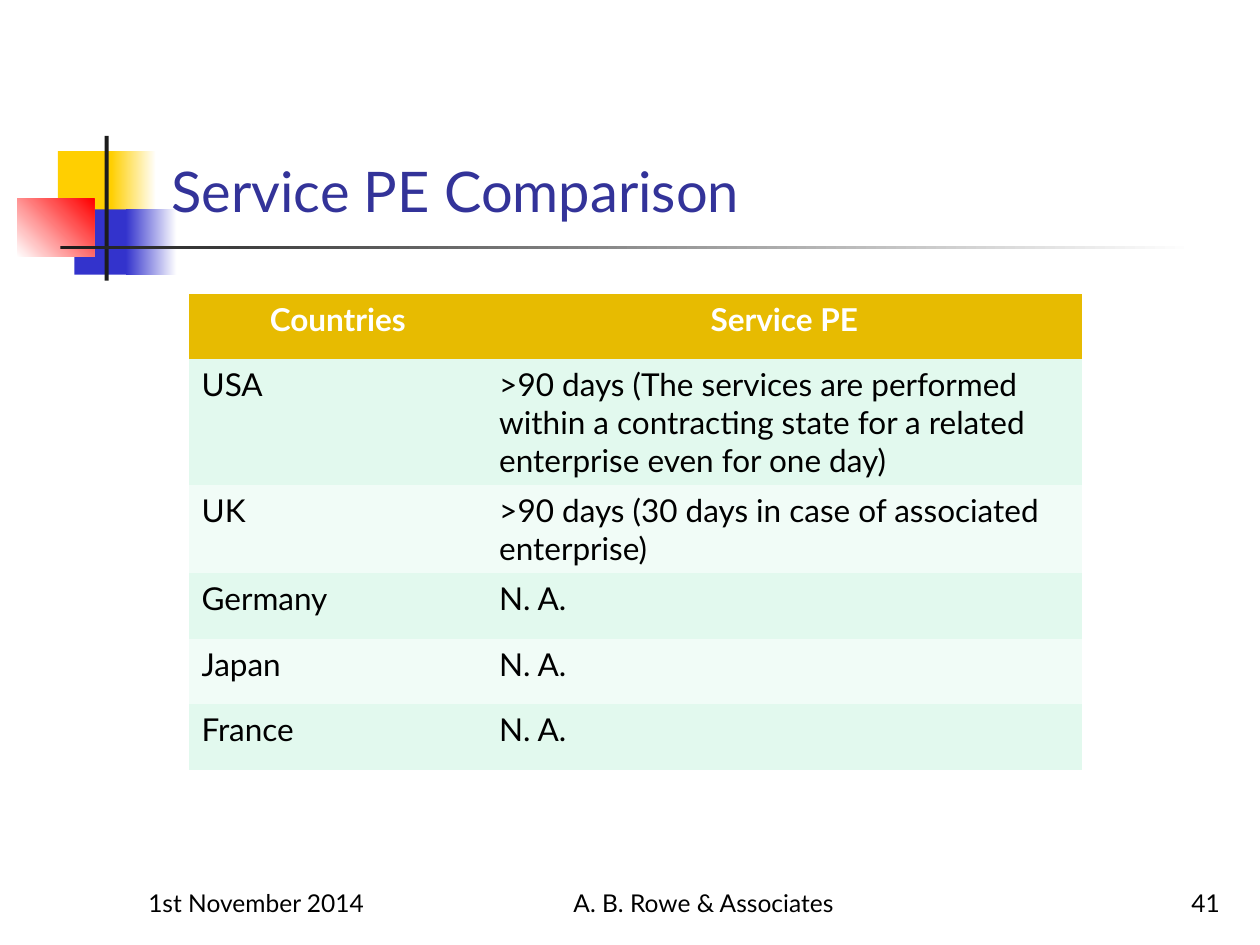
from dataclasses import dataclass

from pptx import Presentation
from pptx.dml.color import RGBColor
from pptx.enum.shapes import MSO_SHAPE as SHAPE
from pptx.enum.text import MSO_ANCHOR as ANCHOR, PP_ALIGN as ALIGN
from pptx.util import Cm, Pt


@dataclass(frozen=True)
class Theme:
    font: str = "Lato"
    title_size: int = 32
    table_size: int = 18
    footer_size: int = 14
    title: str = "333399"
    text: str = "000000"
    white: str = "FFFFFF"
    yellow: str = "FFCF01"
    blue: str = "3333CC"
    red: str = "FF0000"
    dark: str = "1C1C1C"
    header: str = "E7BB01"
    bands: tuple = ("E2F9EE", "F1FCF7")


theme = Theme()


def write(tf, text, size, color=theme.text, align=ALIGN.LEFT, bold=False):
    """Fill a text frame, one paragraph per line of text."""
    for i, line in enumerate(text.split("\n")):
        p = tf.paragraphs[0] if i == 0 else tf.add_paragraph()
        p.alignment = align
        r = p.add_run()
        r.text = line
        r.font.name = theme.font
        r.font.size = Pt(size)
        r.font.bold = bold
        r.font.color.rgb = RGBColor.from_string(color)


prs = Presentation()
prs.slide_width, prs.slide_height = Cm(25.4), Cm(19.05)
s = prs.slides.add_slide(prs.slide_layouts[5])

# Decoration: left, top, width, height, fill colours, gradient angle
decoration = [
    (1.17, 3.05, 1.22, 1.32, (theme.yellow,), 0),
    (2.24, 3.05, 0.91, 1.32, (theme.yellow, theme.white), 0),
    (1.5, 4.22, 1.17, 1.32, (theme.blue,), 0),
    (2.54, 4.22, 1.02, 1.32, (theme.blue, theme.white), 0),
    (0.35, 4.01, 1.55, 1.17, (theme.white, theme.red), 45),
    (2.11, 2.74, 0.08, 2.92, (theme.dark,), 0),
    (1.22, 4.95, 22.86, 0.08, (theme.dark, theme.white), 0),
]
for left, top, width, height, colors, angle in decoration:
    sp = s.shapes.add_shape(SHAPE.RECTANGLE, Cm(left), Cm(top), Cm(width), Cm(height))
    sp.shadow.inherit = False
    sp.line.fill.background()
    if len(colors) == 1:
        sp.fill.solid()
        sp.fill.fore_color.rgb = RGBColor.from_string(colors[0])
    else:
        sp.fill.gradient()
        sp.fill.gradient_angle = angle
        for stop, color, position in zip(sp.fill.gradient_stops, colors, (0, 1)):
            stop.color.rgb = RGBColor.from_string(color)
            stop.position = position

# Title, in front of the decoration
title = s.shapes.title
title.left, title.top, title.width, title.height = Cm(3.2), Cm(0.58), Cm(21.64), Cm(4.06)
title.text_frame.vertical_anchor = ANCHOR.BOTTOM
write(title.text_frame, "Service PE Comparison", theme.title_size, theme.title)
s.shapes._spTree.append(title._element)

# Footer: date, firm, slide number
footer = [
    (2.74, 5.28, "1st November 2014", ALIGN.LEFT),
    (10.16, 8.05, "A. B. Rowe & Associates", ALIGN.CENTER),
    (19.56, 5.28, "41", ALIGN.RIGHT),
]
for left, width, text, align in footer:
    sp = s.shapes.add_textbox(Cm(left), Cm(17.35), Cm(width), Cm(1.27))
    tf = sp.text_frame
    tf.word_wrap = True
    tf.vertical_anchor = ANCHOR.BOTTOM
    write(tf, text, theme.footer_size, align=align)

# Comparison table
rows = [
    ("Countries", "Service PE"),
    ("USA", ">90 days (The services are performed\n"
            "within a contracting state for a related\n"
            "enterprise even for one day)"),
    ("UK", ">90 days (30 days in case of associated\nenterprise)"),
    ("Germany", "N. A."),
    ("Japan", "N. A."),
    ("France", "N. A."),
]
row_height = 1.32
table = s.shapes.add_table(len(rows), 2, Cm(3.81), Cm(5.92), Cm(18),
                           Cm(row_height * len(rows))).table
for column, width in zip(table.columns, (6, 12)):
    column.width = Cm(width)
# The template's style draws white borders, so the flags that style rows are off
table.first_row = table.horz_banding = False
style_id = table._tbl.tblPr.find("{*}tableStyleId")
style_id.text = "{2D5ABB26-0587-4C30-8999-92F81FD0307C}"  # no style, no grid

for i, row in enumerate(rows):
    header = i == 0
    fill = theme.header if header else theme.bands[(i - 1) % 2]
    for j, text in enumerate(row):
        cell = table.cell(i, j)
        cell.fill.solid()
        cell.fill.fore_color.rgb = RGBColor.from_string(fill)
        write(cell.text_frame, text, theme.table_size,
              color=theme.white if header else theme.text,
              align=ALIGN.CENTER if header else ALIGN.LEFT, bold=header)

prs.save("out.pptx")
